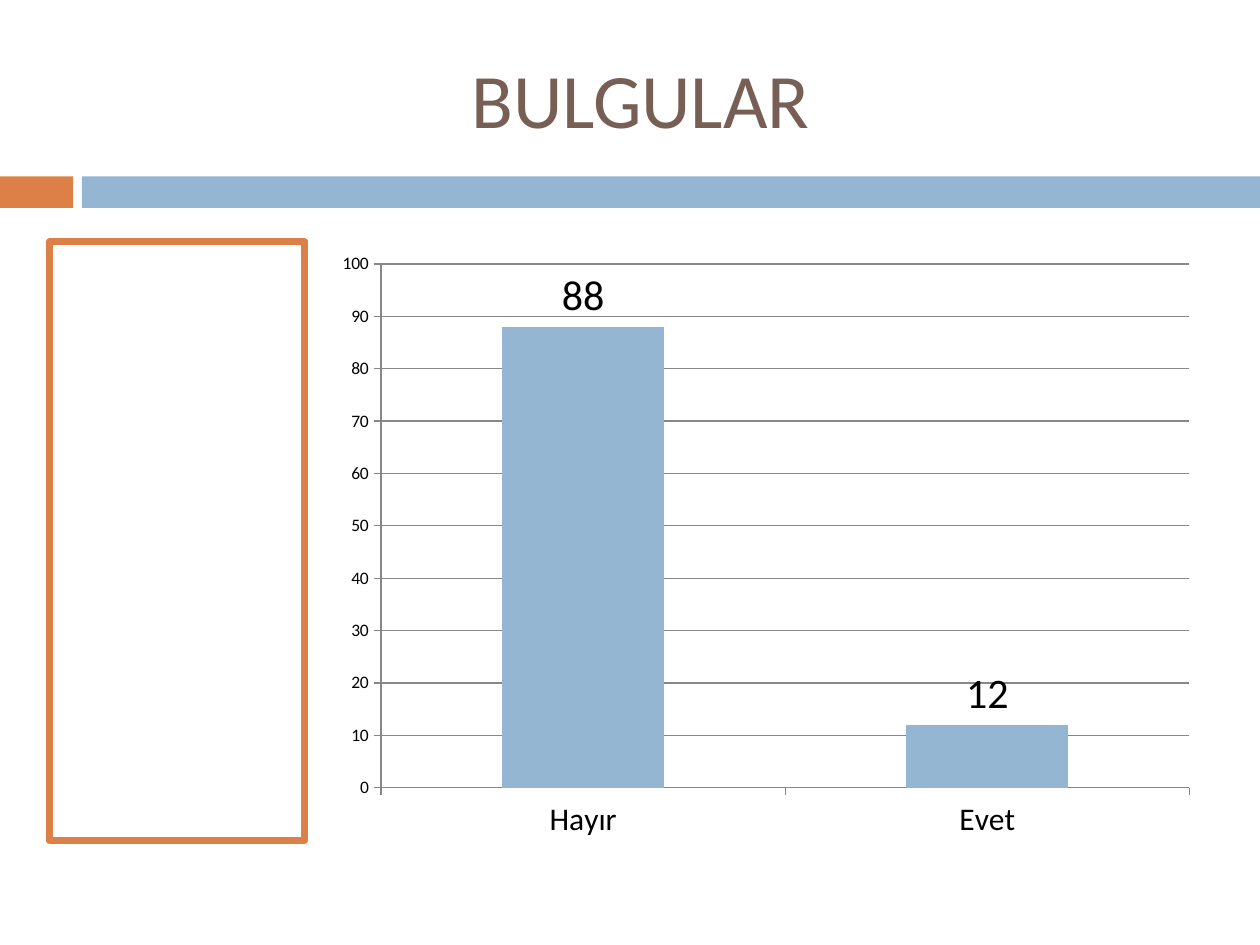
"""Builds the BULGULAR findings slide with its column chart."""
from pptx import Presentation
from pptx.chart.data import CategoryChartData
from pptx.dml.color import RGBColor
from pptx.enum import chart as ch, shapes, text
from pptx.util import Inches, Pt

COLORS = {"orange": "DD8047", "blue": "94B6D2", "brown": "775F55",
          "white": "FFFFFF", "black": "000000", "grey": "878787"}


def rgb(name):
    """Return the named colour."""
    return RGBColor.from_string(COLORS[name])


def style_font(font, size, color="black"):
    """Apply the slide's typeface with a size and colour."""
    font.name, font.size, font.bold = "Calibri", Pt(size), False
    font.color.rgb = rgb(color)


def add_text(tf, content, size=18, color="black", align=text.PP_ALIGN.LEFT):
    """Write one formatted paragraph into a text frame."""
    p = tf.paragraphs[0]
    p.alignment = align
    r = p.add_run()
    r.text = content
    style_font(r.font, size, color)


class Deck:
    """Holds the presentation and the current slide."""

    def __init__(self, width, height):
        """Start a presentation with one title slide of the given size."""
        self.prs = Presentation()
        self.prs.slide_width, self.prs.slide_height = Inches(width), Inches(height)
        self.s = self.prs.slides.add_slide(self.prs.slide_layouts[5])

    def rect(self, box, fill, line=None, width=0):
        """Add a filled rectangle with an optional outline."""
        sp = self.s.shapes.add_shape(shapes.MSO_SHAPE.RECTANGLE, *map(Inches, box))
        sp.shadow.inherit = False
        sp.fill.solid()
        sp.fill.fore_color.rgb = rgb(fill)
        if line:
            sp.line.color.rgb = rgb(line)
            sp.line.width = Pt(width)
        else:
            sp.line.fill.background()

    def title(self, box, content):
        """Place and fill the title placeholder."""
        sp = self.s.shapes.title
        sp.left, sp.top, sp.width, sp.height = map(Inches, box)
        tf = sp.text_frame
        tf.word_wrap = True
        tf.vertical_anchor = text.MSO_ANCHOR.MIDDLE
        add_text(tf, content, 44, "brown", text.PP_ALIGN.CENTER)

    def columns(self, box, values):
        """Add a labelled column chart from a dict of values."""
        data = CategoryChartData()
        data.categories = list(values)
        data.add_series("Series 1", list(values.values()))
        chart = self.s.shapes.add_chart(
            ch.XL_CHART_TYPE.COLUMN_CLUSTERED, *map(Inches, box), data).chart
        chart.has_legend = chart.has_title = False
        style_font(chart.font, 10)

        plot = chart.plots[0]
        plot.gap_width, plot.vary_by_categories = 150, False
        fill = plot.series[0].format.fill
        fill.solid()
        fill.fore_color.rgb = rgb("blue")
        labels = plot.series[0].data_labels
        labels.show_value = True
        labels.position = ch.XL_LABEL_POSITION.OUTSIDE_END
        style_font(labels.font, 24)

        cat, val = chart.category_axis, chart.value_axis
        val.minimum_scale, val.maximum_scale, val.major_unit = 0, 100, 10
        val.has_major_gridlines = True
        for axis, size in ((cat, 18), (val, 10)):
            axis.major_tick_mark = ch.XL_TICK_MARK.OUTSIDE
            style_font(axis.tick_labels.font, size)
        for part in (cat, val, val.major_gridlines):
            part.format.line.color.rgb = rgb("grey")
            part.format.line.width = Pt(0.75)


def main():
    """Build and save the slide."""
    deck = Deck(10, 7.5)
    deck.rect((0, 1.4, 0.58, 0.25), "orange")
    deck.rect((0.65, 1.4, 9.35, 0.25), "blue")
    deck.title((0.67, 0.3, 8.83, 0.95), "BULGULAR")
    deck.rect((0.39, 1.92, 2.03, 4.75), "white", "orange", 4)
    deck.columns((2.58, 1.92, 7, 4.83), {"Hayır": 88, "Evet": 12})
    deck.prs.save("out.pptx")


if __name__ == "__main__":
    main()
